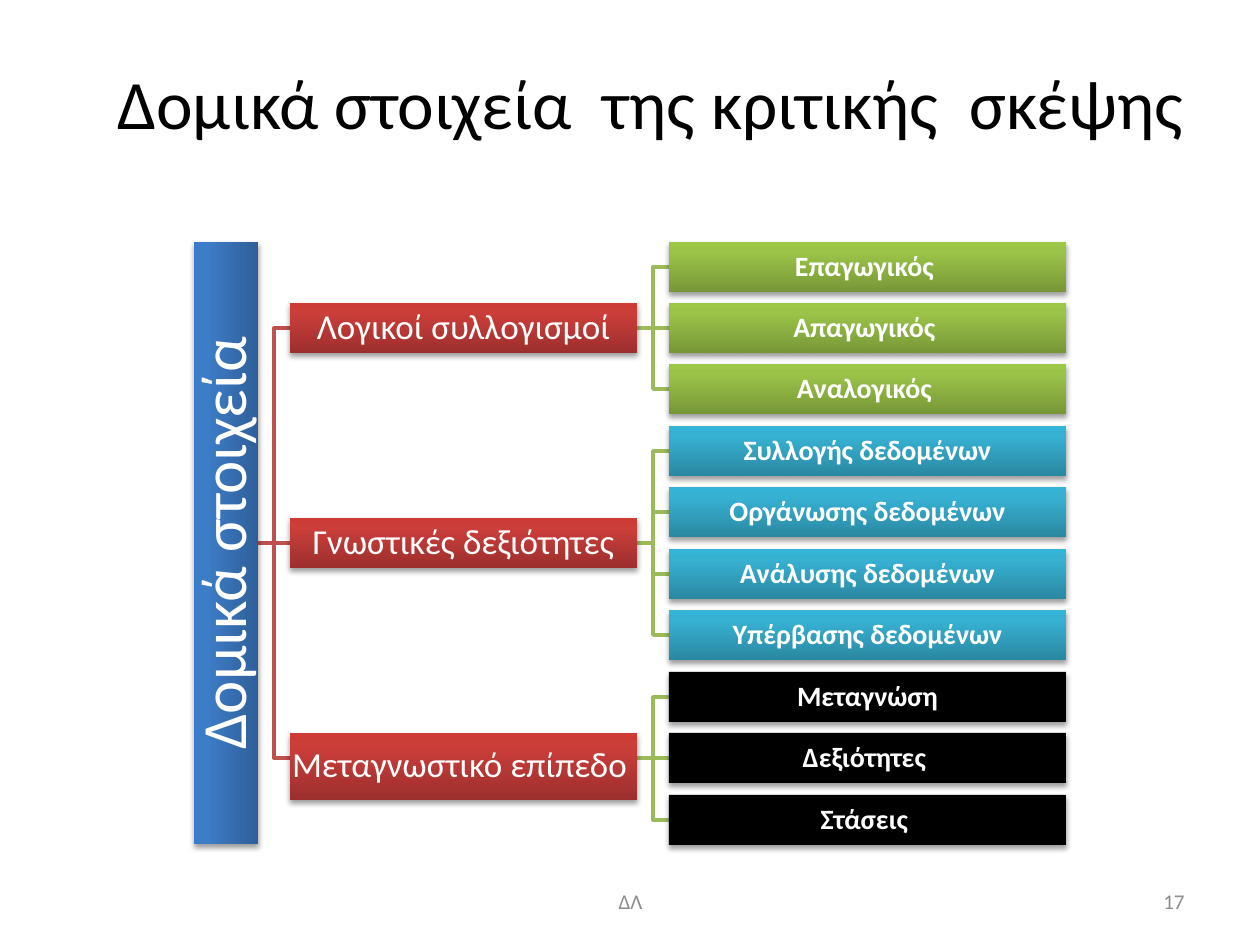
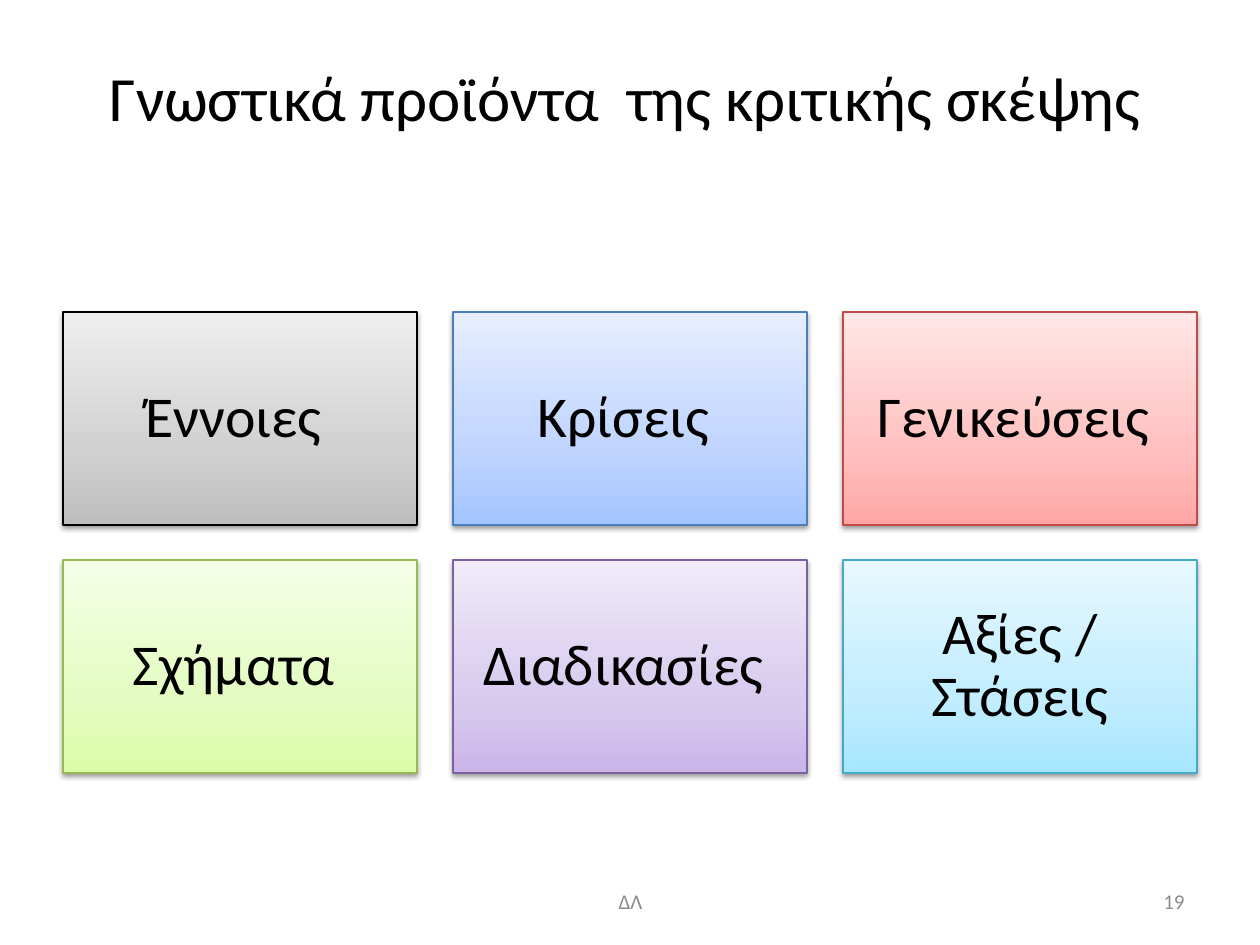
import copy

import lxml.etree
import pptx
import pptx.dml.color
import pptx.enum.shapes
import pptx.enum.text
import pptx.oxml.ns
import pptx.util

PX = pptx.util.Inches(1) / 126
FONT = "Calibri"
BLACK, WHITE, GRAY = "000000", "FFFFFF", "8C8C8C"
RED_LINE, GREEN_LINE = "C0504D", "9BBB59"
BLUE_FILL = ("2F5F99", "3D7CC7", "3A7CCB")
RED_FILL = ("9C2F2D", "CB3E3A", "CE3B37")
GREEN_FILL = ("779737", "9BC348", "9DC746")
TEAL_FILL = ("2A88A2", "37B1D2", "34B4D6")
BLACK_FILL = (BLACK, BLACK, BLACK)
CENTER = pptx.enum.text.PP_ALIGN.CENTER
RIGHT = pptx.enum.text.PP_ALIGN.RIGHT

ROOT_LEFT, ROOT_WIDTH, ROOT_HEIGHT = 194, 64, 602
TREE_TOP, ROW_HEIGHT, LAST_ROW_OFFSET, LAST_ROW = 242, 50, 553, 9
CATEGORY_LEFT, CATEGORY_WIDTH = 290, 347
LEAF_LEFT, LEAF_WIDTH = 669, 397

BRANCHES = [
    ("Λογικοί συλλογισμοί", 50, GREEN_FILL,
     ["Επαγωγικός ", "Απαγωγικός ", "Αναλογικός "]),
    ("Γνωστικές δεξιότητες", 50, TEAL_FILL,
     ["Συλλογής δεδομένων", "Οργάνωσης δεδομένων",
      "Ανάλυσης δεδομένων", "Υπέρβασης δεδομένων"]),
    ("Μεταγνωστικό επίπεδο  ", 67, BLACK_FILL,
     ["Μεταγνώση", "Δεξιότητες ", "Στάσεις "]),
]

PRODUCTS = [
    ("Έννοιες ", ("BDBDBD", "D1D1D1", "EEEEEE"), BLACK),
    ("Κρίσεις ", ("A4C4FF", "BFD4FF", "E6EEFF"), "4B7EBC"),
    ("Γενικεύσεις ", ("FFA6A5", "FFC0BF", "FFE7E7"), "BF4C48"),
    ("Σχήματα ", ("DAFDA7", "E4FCC2", "F5FFE7"), "98B955"),
    ("Διαδικασίες ", ("C9B5E8", "D8CBEE", "F0EAF9"), "7D60A0"),
    ("Αξίες / Στάσεις", ("A7E6FF", "C1EDFF", "E7F8FF"), "46AAC5"),
]


def px(*lengths):
    return [round(length * PX) for length in lengths]


def color(code):
    return pptx.dml.color.RGBColor.from_string(code)


def write(shape, text, size, ink, align=CENTER, bold=False):
    frame = shape.text_frame
    frame.word_wrap = True
    frame.vertical_anchor = pptx.enum.text.MSO_ANCHOR.MIDDLE
    para = frame.paragraphs[0]
    para.text = text
    para.alignment = align
    font = para.font
    font.name, font.size, font.bold = FONT, pptx.util.Pt(size), bold
    font.color.rgb = color(ink)
    return para


def add_text(page, area, text, size, ink, align=CENTER):
    box = page.shapes.add_textbox(*px(*area))
    write(box, text, size, ink, align)


def fill_gradient(shape, colors, middle):
    fill = shape.fill
    fill.gradient()
    fill.gradient_angle = 90
    stop_list = shape._element.spPr.find(".//" + pptx.oxml.ns.qn("a:gsLst"))
    stop_list.append(copy.deepcopy(stop_list[-1]))
    for stop, code, position in zip(fill.gradient_stops, colors, (0, middle, 1)):
        stop.color.rgb = color(code)
        stop.position = position


def add_shadow(shape):
    qn = pptx.oxml.ns.qn
    shape.shadow.inherit = False
    effects = shape._element.spPr.find(qn("a:effectLst"))
    shadow = lxml.etree.SubElement(
        effects, qn("a:outerShdw"), blurRad=str(pptx.util.Pt(3.1)),
        dist=str(pptx.util.Pt(1.6)), dir="5400000", rotWithShape="0")
    tone = lxml.etree.SubElement(shadow, qn("a:srgbClr"), val=BLACK)
    lxml.etree.SubElement(tone, qn("a:alpha"), val="38000")


def add_box(page, area, text, size, colors, ink=WHITE, bold=False,
            outline=None, middle=0.8, inset=1):
    box = page.shapes.add_shape(pptx.enum.shapes.MSO_SHAPE.RECTANGLE, *px(*area))
    if len(set(colors)) == 1:
        box.fill.solid()
        box.fill.fore_color.rgb = color(colors[0])
    else:
        fill_gradient(box, colors, middle)
    if outline:
        box.line.color.rgb = color(outline)
        box.line.width = pptx.util.Pt(0.75)
    else:
        box.line.fill.background()
    add_shadow(box)
    frame = box.text_frame
    frame.margin_left = frame.margin_right = px(inset)[0]
    frame.margin_top = frame.margin_bottom = px(inset)[0]
    write(box, text, size, ink, bold=bold).line_spacing = 0.9
    return box


def add_branch_line(page, start, end, ink, source=None, target=None):
    kinds = pptx.enum.shapes.MSO_CONNECTOR
    straight = start[1] == end[1]
    kind = kinds.STRAIGHT if straight else kinds.ELBOW
    link = page.shapes.add_connector(kind, *px(*start, *end))
    link.line.color.rgb = color(ink)
    link.line.width = pptx.util.Pt(2)
    lxml.etree.SubElement(link._element.spPr, pptx.oxml.ns.qn("a:effectLst"))
    if straight and source is not None:
        link.begin_connect(source, 3)
    if straight and target is not None:
        link.end_connect(target, 1)
    page.shapes._spTree.insert(2, link._element)


def add_page(deck, title, title_area, title_size, number):
    page = deck.slides.add_slide(deck.slide_layouts[6])
    add_text(page, title_area, title, title_size, BLACK)
    add_text(page, (431, 876, 399, 50), "ΔΛ", 12, GRAY)
    add_text(page, (903, 876, 294, 50), number, 12, GRAY, RIGHT)
    return page


def row_top(row):
    return TREE_TOP + row * LAST_ROW_OFFSET // LAST_ROW


def add_root(page):
    center_x = ROOT_LEFT + ROOT_WIDTH // 2
    center_y = TREE_TOP + ROOT_HEIGHT // 2
    area = (center_x - ROOT_HEIGHT // 2, center_y - ROOT_WIDTH // 2,
            ROOT_HEIGHT, ROOT_WIDTH)
    root = add_box(page, area, "Δομικά στοιχεία", 36, BLUE_FILL, inset=3)
    root.rotation = 270
    return ROOT_LEFT + ROOT_WIDTH, center_y


def add_branch(page, root_end, first_row, name, height, colors, leaves):
    half = ROW_HEIGHT // 2
    tops = [row_top(first_row + index) for index in range(len(leaves))]
    top = (tops[0] + tops[-1]) // 2
    category = add_box(page, (CATEGORY_LEFT, top, CATEGORY_WIDTH, height),
                       name, 20, RED_FILL)
    joint = category if height == ROW_HEIGHT else None
    add_branch_line(page, root_end, (CATEGORY_LEFT, top + half), RED_LINE,
                    target=joint)
    start = (CATEGORY_LEFT + CATEGORY_WIDTH, top + half)
    for leaf_top, text in zip(tops, leaves):
        leaf = add_box(page, (LEAF_LEFT, leaf_top, LEAF_WIDTH, ROW_HEIGHT),
                       text, 16, colors, bold=True)
        add_branch_line(page, start, (LEAF_LEFT, leaf_top + half), GREEN_LINE,
                        joint, leaf)


def add_elements_page(deck):
    page = add_page(deck, "Δομικά στοιχεία  της κριτικής  σκέψης",
                    (95, 38, 1111, 127), 39.6, "17")
    root_end = add_root(page)
    first_row = 0
    for name, height, colors, leaves in BRANCHES:
        add_branch(page, root_end, first_row, name, height, colors, leaves)
        first_row += len(leaves)


def add_products_page(deck):
    page = add_page(deck, "Γνωστικά προϊόντα  της κριτικής σκέψης",
                    (35, 38, 1181, 117), 36, "19")
    for index, (name, colors, outline) in enumerate(PRODUCTS):
        row, column = divmod(index, 3)
        area = (63 + 390 * column, 312 + 248 * row, 354, 213)
        add_box(page, area, name, 33, colors, BLACK, outline=outline,
                middle=0.35, inset=18)


def main():
    deck = pptx.Presentation()
    deck.slide_width, deck.slide_height = px(1260, 945)
    add_elements_page(deck)
    add_products_page(deck)
    deck.save("out.pptx")


if __name__ == "__main__":
    main()
